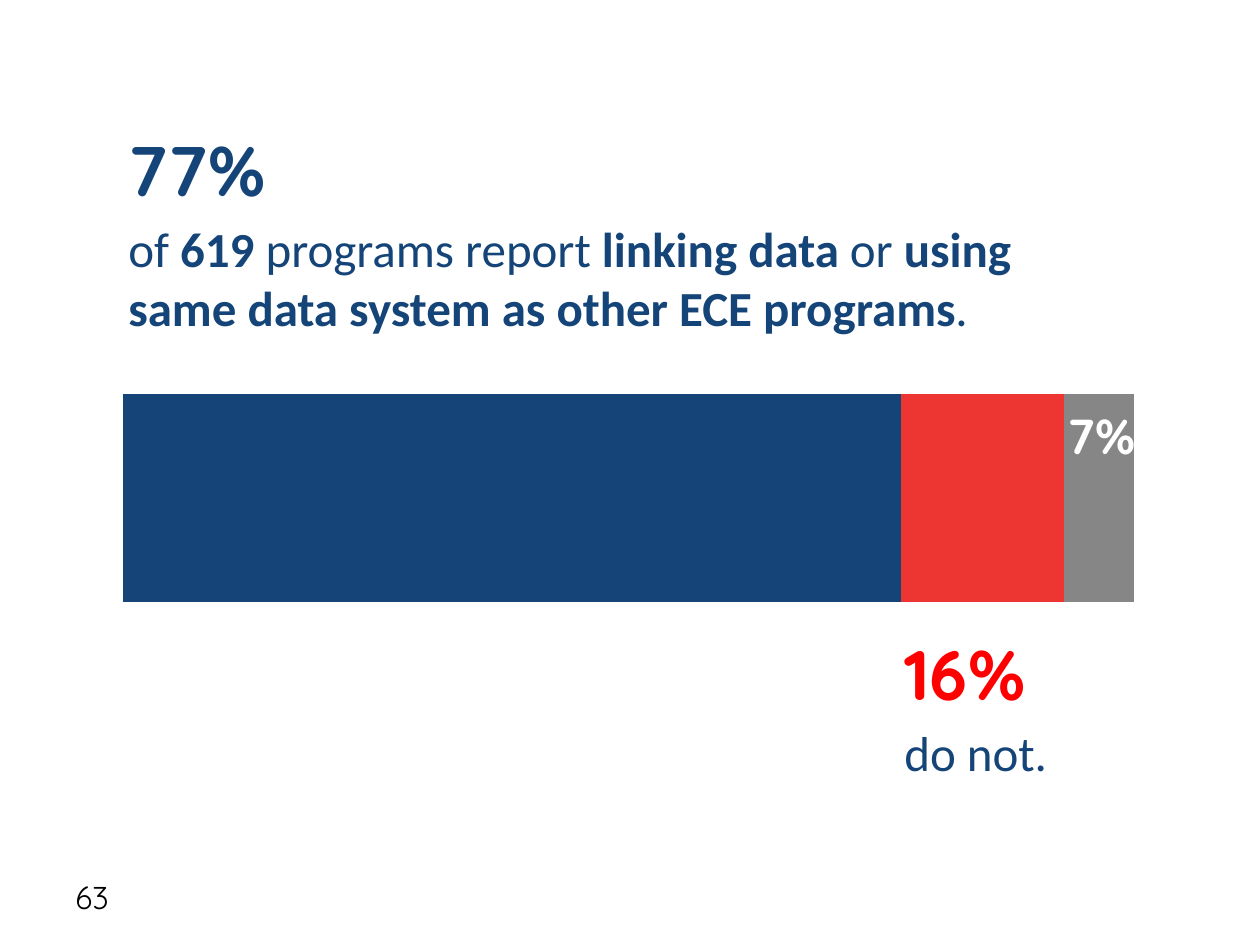
from lxml.etree import SubElement
from pptx import Presentation
from pptx.chart.data import CategoryChartData
from pptx.dml.color import RGBColor
from pptx.enum.chart import XL_CHART_TYPE
from pptx.enum.text import MSO_ANCHOR, MSO_AUTO_SIZE, PP_ALIGN
from pptx.oxml.ns import qn
from pptx.util import Emu, Pt

SCALE = 914400 / 126
NAVY, RED = "154578", "FF0000"


def px(*vals):
    return [Emu(round(v * SCALE)) for v in vals]


def rgb(c):
    return RGBColor.from_string(c)


prs = Presentation()
prs.slide_width, prs.slide_height = px(1260, 945)
s = prs.slides.add_slide(prs.slide_layouts[5])

data = CategoryChartData()
data.categories = ["1"]
series = [("Series 1", 100, NAVY), ("Series 2", 21, "ED3532"), ("Series 3", 9, "868687")]
for name, val, color in series:
    data.add_series(name, [val])
chart = s.shapes.add_chart(XL_CHART_TYPE.BAR_STACKED, *px(105, 212, 1050, 559), data).chart
chart.has_legend = chart.has_title = False
chart.font.size, chart.font.name = Pt(18), "Calibri"
chart.font.color.rgb = rgb("000000")
plot = chart.plots[0]
for k, v in dict(gap_width=150, overlap=100, vary_by_categories=False).items():
    setattr(plot, k, v)
for ser, (name, val, color) in zip(plot.series, series):
    ser.format.fill.solid()
    ser.format.fill.fore_color.rgb = rgb(color)
chart.category_axis.visible = False
axis = dict(minimum_scale=0, maximum_scale=130, major_unit=26, has_major_gridlines=False, visible=False)
for k, v in axis.items():
    setattr(chart.value_axis, k, v)
chart.value_axis.tick_labels.number_format = "0%"
chart.value_axis.tick_labels.number_format_is_linked = False

area = plot.series[0].format.fill and chart.element.find(".//" + qn("c:plotArea"))
layout = area.find(qn("c:layout"))
if layout is None:
    layout = SubElement(area, qn("c:layout"))
    area.insert(0, layout)
manual = SubElement(layout, qn("c:manualLayout"))
for tag, v in dict(layoutTarget="inner", xMode="edge", yMode="edge", x=0.017, y=0.047, w=0.963, h=0.931).items():
    SubElement(manual, qn(f"c:{tag}")).set("val", str(v))

head = dict(size=Pt(40), name="Quicksand", bold=True)
body = dict(size=Pt(28), name="Calibri", bold=False)
sentence = [
    ("of ", False), ("619", True), (" programs report ", False), ("linking data ", True),
    ("or ", False), ("using same data system as other ECE programs", True), (".", False),
]
texts = [
    ((116, 120, 609, 97), [("77%", True)], head, NAVY),
    ((116, 212, 935, 131), sentence, body, NAVY),
    ((892, 624, 340, 97), [("16%", True)], head, RED),
    ((892, 716, 340, 72), [("do not.", False)], body, NAVY),
    ((1055, 399, 168, 72), [("7%", True)], dict(head, size=Pt(28)), "FFFFFF"),
    ((63, 872, 294, 50), [("63", False)], dict(head, size=Pt(18)), "000000"),
]
for i, (box, runs, fmt, color) in enumerate(texts):
    sp = s.shapes.title if i == 0 else s.shapes.add_textbox(*px(*box))
    sp.left, sp.top, sp.width, sp.height = px(*box)
    tf = sp.text_frame
    anchor = MSO_ANCHOR.MIDDLE if runs[0][0] == "63" else MSO_ANCHOR.TOP
    for k, v in dict(word_wrap=True, auto_size=MSO_AUTO_SIZE.NONE, vertical_anchor=anchor).items():
        setattr(tf, k, v)
    p = tf.paragraphs[0]
    p.alignment = PP_ALIGN.LEFT
    p.space_before = Pt(0)
    for text, bold in runs:
        r = p.add_run()
        r.text = text
        for k, v in dict(fmt, bold=bold).items():
            setattr(r.font, k, v)
        r.font.color.rgb = rgb(color)

prs.save("out.pptx")
